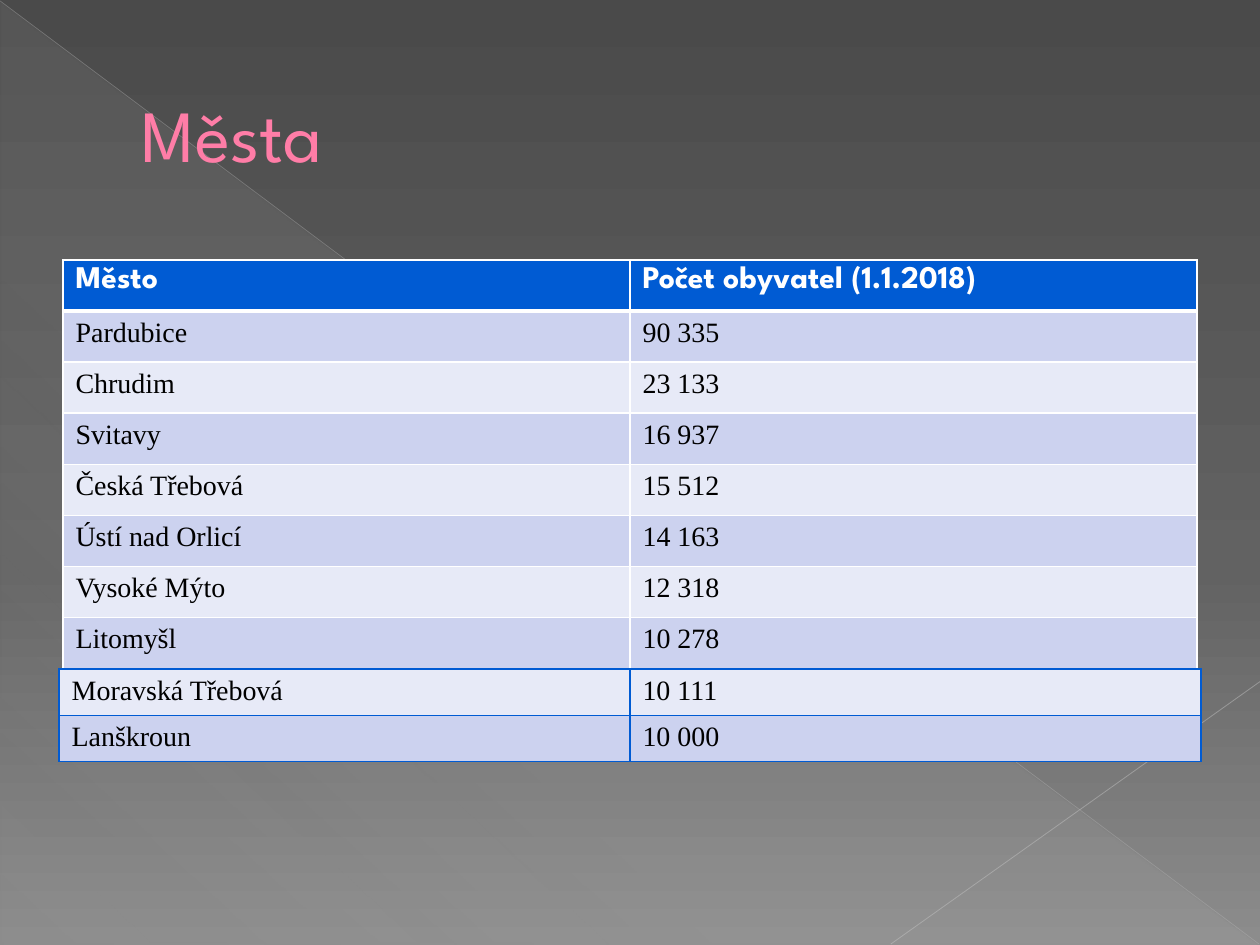
"""Build a slide listing towns and their population in two stacked tables."""
from lxml.etree import SubElement
from pptx import Presentation
from pptx.dml.color import RGBColor
from pptx.enum.shapes import MSO_CONNECTOR, MSO_SHAPE
from pptx.enum.text import MSO_ANCHOR
from pptx.oxml.ns import qn
from pptx.util import Pt

COLORS = {
    "title": "FF7DA7", "title_edge": "B12761", "header": "005BD3",
    "band_dark": "CCD2EF", "band_light": "E7EAF7", "white": "FFFFFF",
    "black": "000000", "wedge": "D2D2D2", "falling": "BFBFBF", "rising": "C6C6C6",
    "sky_top": "4A4A4A", "sky_middle": "626262", "sky_bottom": "8C8C8C",
}
HEADING_FONT, BODY_FONT = "League Spartan", "Times New Roman"


def add_color(parent, name, opacity=100):
    color = SubElement(parent, qn("a:srgbClr"), val=COLORS[name])
    if opacity < 100:
        SubElement(color, qn("a:alpha"), val=str(opacity * 1000))


def set_gradient(fill, owner, angle, stops):
    fill.gradient()
    fill.gradient_angle = 360 - angle
    stop_list = owner.find(".//" + qn("a:gsLst"))
    stop_list.clear()
    for position, name, opacity in stops:
        stop = SubElement(stop_list, qn("a:gs"), pos=str(position * 1000))
        add_color(stop, name, opacity)


prs = Presentation()
prs.slide_width, prs.slide_height = Pt(720), Pt(540)
slide = prs.slides.add_slide(prs.slide_layouts[6])
set_gradient(slide.background.fill, slide.element, 90,
             [(0, "sky_top", 100), (60, "sky_middle", 100), (100, "sky_bottom", 100)])

wedge = slide.shapes.add_shape(MSO_SHAPE.RIGHT_TRIANGLE, Pt(0.5), Pt(1.2), Pt(718.8), Pt(538.5))
wedge.shadow.inherit = False
wedge.line.fill.background()
set_gradient(wedge.fill, wedge.element.spPr, 133,
             [(0, "wedge", 10), (70, "wedge", 8), (100, "wedge", 1)])

for x1, y1, x2, y2, name, width, opacity in [
    (0, 0.5, 719.5, 539.5, "falling", 0.39, 35),
    (720, 389.5, 509, 539.5, "rising", 0.47, 45),
]:
    ray = slide.shapes.add_connector(MSO_CONNECTOR.STRAIGHT, Pt(x1), Pt(y1), Pt(x2), Pt(y2))
    ray.line.width = Pt(width)
    ray.line.color.rgb = RGBColor.from_string(COLORS[name])
    ray_color = ray.element.spPr.find(".//" + qn("a:srgbClr"))
    SubElement(ray_color, qn("a:alpha"), val=str(opacity * 1000))
    SubElement(ray.element.spPr, qn("a:effectLst"))

title = slide.shapes.add_textbox(Pt(36), Pt(21), Pt(648), Pt(110)).text_frame
title.word_wrap = True
title.vertical_anchor = MSO_ANCHOR.MIDDLE
title.paragraphs[0].line_spacing = 1
title.paragraphs[0]._p.get_or_add_pPr().set("marL", str(Pt(38)))
title_run = title.paragraphs[0].add_run()
title_run.text = "Města"
title_run.font.size = Pt(42)
title_run.font.name = HEADING_FONT
title_run.font.color.rgb = RGBColor.from_string(COLORS["title"])
title_edge = title_run.font._element.makeelement(qn("a:ln"), {"w": str(Pt(0.5))})
title_run.font._element.insert(0, title_edge)
add_color(SubElement(title_edge, qn("a:solidFill")), "title_edge")

towns = [
    ("Město", "Počet obyvatel (1.1.2018)"),
    ("Pardubice", "90 335"),
    ("Chrudim", "23 133"),
    ("Svitavy", "16 937"),
    ("Česká Třebová", "15 512"),
    ("Ústí nad Orlicí", "14 163"),
    ("Vysoké Mýto", "12 318"),
    ("Litomyšl", "10 278"),
]
more_towns = [("Moravská Třebová", "10 111"), ("Lanškroun", "10 000")]

for rows, left, top, width, row_height, border, has_header in [
    (towns, 36, 148.5, 648, 29.2, "white", True),
    (more_towns, 33.8, 382.3, 652.4, 25, "header", False),
]:
    table = slide.shapes.add_table(len(rows), 2, Pt(left), Pt(top), Pt(width),
                                   Pt(row_height * len(rows))).table
    table.first_row = has_header
    for row_index, row in enumerate(rows):
        table.rows[row_index].height = Pt(row_height)
        is_header = has_header and row_index == 0
        band = "header" if is_header else "band_dark" if row_index % 2 else "band_light"
        for column_index, wording in enumerate(row):
            cell = table.cell(row_index, column_index)
            for side in ("L", "R", "T", "B"):
                under_header = has_header and (row_index, side) in [(0, "B"), (1, "T")]
                edge = SubElement(cell._tc.get_or_add_tcPr(), qn("a:ln" + side),
                                  w=str(Pt(3 if under_header else 1)))
                add_color(SubElement(edge, qn("a:solidFill")), border)
            cell.fill.solid()
            cell.fill.fore_color.rgb = RGBColor.from_string(COLORS[band])
            run = cell.text_frame.paragraphs[0].add_run()
            run.text = wording
            run.font.size = Pt(18 if is_header else 16)
            run.font.name = HEADING_FONT if is_header else BODY_FONT
            run.font.bold = is_header
            run.font.color.rgb = RGBColor.from_string(COLORS["white" if is_header else "black"])

prs.save("out.pptx")
